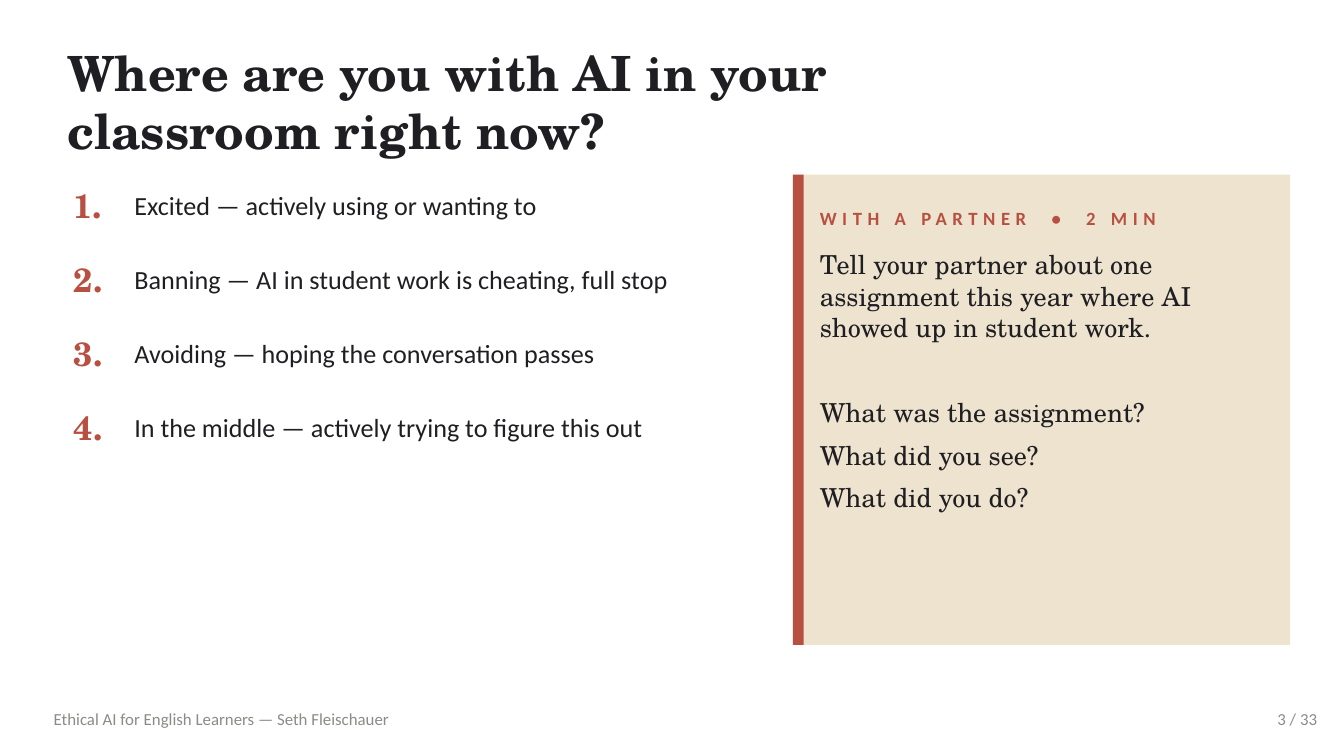
from dataclasses import dataclass

from pptx import Presentation
from pptx.dml.color import RGBColor
from pptx.enum.shapes import MSO_SHAPE
from pptx.enum.text import MSO_ANCHOR, MSO_AUTO_SIZE, PP_ALIGN
from pptx.util import Inches, Pt

RECTANGLE = MSO_SHAPE.RECTANGLE
TOP, MIDDLE = MSO_ANCHOR.TOP, MSO_ANCHOR.MIDDLE
LEFT, RIGHT = PP_ALIGN.LEFT, PP_ALIGN.RIGHT
NO_AUTOFIT = MSO_AUTO_SIZE.NONE
TITLE_ONLY = 5

SERIF, SANS = "TeX Gyre Schola", "Calibri"
INK, RUST, SAND, GREY = "1F1F23", "B85042", "EDE3CE", "8E8B86"

SLIDE_WIDTH = Inches(10)
SLIDE_HEIGHT = SLIDE_WIDTH * 9 // 16
ROW_TOP, ROW_PITCH, ROW_HEIGHT = 1.3, 0.55, 0.45
PANEL_LEFT, PANEL_TOP, PANEL_HEIGHT = 5.9, 1.3, 3.5
FOOTER_TOP, FOOTER_HEIGHT = 5.2, 0.3


@dataclass(frozen=True)
class Box:
    left: float
    top: float
    width: float
    height: float

    def lengths(self) -> tuple:
        return tuple(Inches(v) for v in (self.left, self.top, self.width, self.height))


@dataclass(frozen=True)
class Line:
    """A paragraph: its pieces of (text, letter spacing in points) and the space after it."""
    pieces: tuple
    space_after: float = 0


def plain(text: str, space_after: float = 0) -> Line:
    return Line(((text, 0),), space_after)


def rgb(color: str) -> RGBColor:
    return RGBColor.from_string(color)


def add_text(slide, box: Box, *lines: Line, font: str = SANS, size: float = 14,
             color: str = INK, bold: bool = False, align=LEFT, anchor=MIDDLE,
             holder=None) -> None:
    """Write lines into the given placeholder, or into a new text box."""
    if holder is None:
        holder = slide.shapes.add_textbox(*box.lengths())
    else:
        holder.left, holder.top, holder.width, holder.height = box.lengths()
    frame = holder.text_frame
    frame.word_wrap = True
    frame.auto_size = NO_AUTOFIT
    frame.vertical_anchor = anchor
    frame.margin_left = frame.margin_right = frame.margin_top = frame.margin_bottom = 0
    for index, line in enumerate(lines):
        paragraph = frame.add_paragraph() if index else frame.paragraphs[0]
        paragraph.alignment = align
        paragraph.space_after = Pt(line.space_after)
        for text, tracking in line.pieces:
            run = paragraph.add_run()
            run.text = text
            run.font.name = font
            run.font.size = Pt(size)
            run.font.bold = bold
            run.font.color.rgb = rgb(color)
            if tracking:
                run.font._element.set("spc", str(round(tracking * 100)))


def add_block(slide, box: Box, color: str) -> None:
    block = slide.shapes.add_shape(RECTANGLE, *box.lengths())
    block.shadow.inherit = False
    block.fill.solid()
    block.fill.fore_color.rgb = rgb(color)
    block.line.fill.background()


def add_stances(slide, stances: tuple) -> None:
    for index, stance in enumerate(stances):
        top = round(ROW_TOP + index * ROW_PITCH, 2)
        add_text(slide, Box(0.55, top, 0.5, ROW_HEIGHT), plain(f"{index + 1}."),
                 font=SERIF, size=18, color=RUST, bold=True)
        add_text(slide, Box(1, top, 4.6, ROW_HEIGHT), plain(stance))


def add_partner_panel(slide) -> None:
    add_block(slide, Box(PANEL_LEFT, PANEL_TOP, 3.7, PANEL_HEIGHT), SAND)
    add_block(slide, Box(PANEL_LEFT, PANEL_TOP, 0.08, PANEL_HEIGHT), RUST)
    wide_space = (" ", 8.3)
    heading = Line((("WITH A PARTNER", 3), wide_space, ("•", 3), wide_space, ("2 MIN", 3)))
    add_text(slide, Box(6.1, 1.45, 3.4, 0.35), heading, size=10, color=RUST, bold=True)
    add_text(slide, Box(6.1, 1.85, 3.4, 2.85),
             plain("Tell your partner about one assignment this year "
                   "where AI showed up in student work.", 28.8),
             plain("What was the assignment?", 6),
             plain("What did you see?", 6),
             plain("What did you do?", 6),
             font=SERIF, anchor=TOP)


def main() -> None:
    deck = Presentation()
    deck.slide_width, deck.slide_height = SLIDE_WIDTH, SLIDE_HEIGHT
    slide = deck.slides.add_slide(deck.slide_layouts[TITLE_ONLY])

    add_text(slide, Box(0.5, 0.4, 6.7, 0.7),
             plain("Where are you with AI in your classroom right now?"),
             font=SERIF, size=26, bold=True, holder=slide.shapes.title)
    add_stances(slide, (
        "Excited — actively using or wanting to",
        "Banning — AI in student work is cheating, full stop",
        "Avoiding — hoping the conversation passes",
        "In the middle — actively trying to figure this out",
    ))
    add_partner_panel(slide)
    add_text(slide, Box(9, FOOTER_TOP, 0.8, FOOTER_HEIGHT), plain("3 / 33"),
             size=9, color=GREY, align=RIGHT)
    add_text(slide, Box(0.4, FOOTER_TOP, 7, FOOTER_HEIGHT),
             plain("Ethical AI for English Learners — Seth Fleischauer"), size=9, color=GREY)

    deck.save("out.pptx")


if __name__ == "__main__":
    main()
